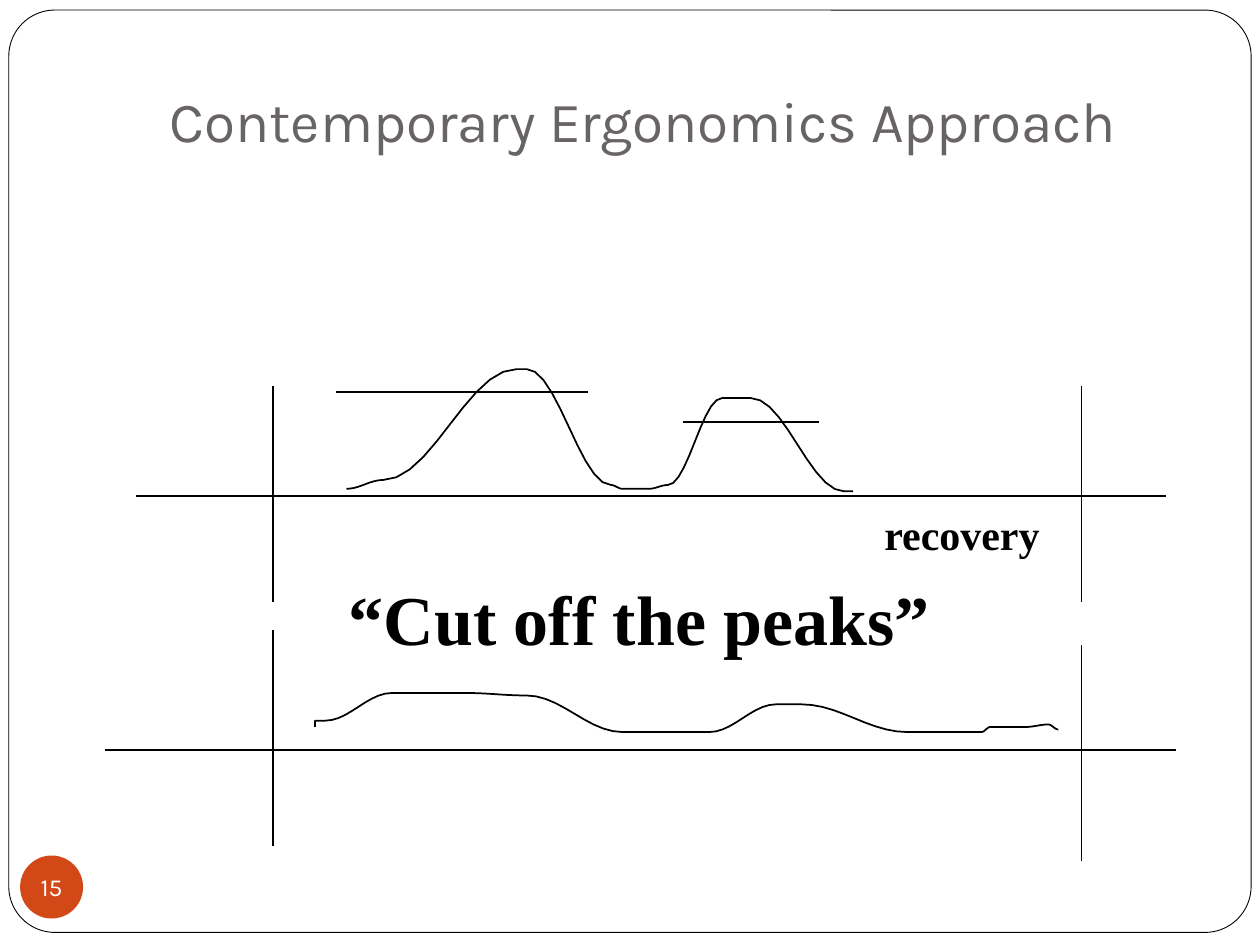
"""Build a slide on cutting off the peaks of physical workload."""
from collections.abc import Sequence
from dataclasses import dataclass
from itertools import pairwise
from math import cos, pi
from typing import Any, NamedTuple

from lxml.etree import SubElement
from pptx import Presentation
from pptx.dml.color import RGBColor
from pptx.enum.shapes import MSO_CONNECTOR as Conn, MSO_SHAPE as Shp
from pptx.enum.text import MSO_ANCHOR as Anchor, PP_ALIGN as Align
from pptx.oxml.ns import qn
from pptx.util import Emu, Inches, Pt

COLS, ROWS = 100, 75
CELL = Inches(10) // COLS
STEPS = 10
COLORS = {"paper": "FFFFFF", "ink": "000000", "title": "696464", "badge": "D34817"}
SHIFT_START, SHIFT_END = 21.67, 85.83
UPRIGHT = 17.15
Point = tuple[float, float]
Box = tuple[float, float, float, float]


class Stage(NamedTuple):
    """A phase of the workload and the column and row where it ends."""
    phase: str
    col: float
    row: float


class Span(NamedTuple):
    """A horizontal line on one row."""
    start: float
    end: float
    row: float


@dataclass(frozen=True)
class Workload:
    """A work shift with its time axis, limits and load curve."""
    axis: Span
    start_top: float
    end_top: float
    stages: Sequence[Stage]
    limits: Sequence[Span] = ()


@dataclass(frozen=True)
class Label:
    """A text with its box and formats."""
    text: str
    box: Box
    font: str
    size: float
    color: str
    bold: bool = False
    frame: tuple[tuple[str, Any], ...] = (("word_wrap", True),)


PEAKED = Workload(
    axis=Span(10.83, 92.5, 39.38), start_top=30.6, end_top=30.6,
    limits=(Span(26.67, 46.67, 31.13), Span(54.17, 65, 33.5)),
    stages=(
        Stage("rest", 27.5, 38.8),
        Stage("warm-up", 30.4, 38.1),
        Stage("high peak", 41, 29.3),
        Stage("high peak held", 41.8, 29.3),
        Stage("relief", 48.5, 38.5),
        Stage("pause", 49.4, 38.8),
        Stage("pause held", 51.5, 38.8),
        Stage("restart", 53, 38.5),
        Stage("low peak", 57.3, 31.6),
        Stage("low peak held", 59.6, 31.6),
        Stage("recovery", 67, 39),
        Stage("recovery held", 67.7, 39),
    ))
LEVELLED = Workload(
    axis=Span(8.33, 93.33, 59.5), start_top=50, end_top=51.2,
    stages=(
        Stage("rest", 25, 57.7),
        Stage("start", 25, 57.2),
        Stage("warm-up", 25.8, 57.2),
        Stage("long load", 31.1, 55),
        Stage("long load held", 37, 55),
        Stage("long load eased", 41.8, 55.2),
        Stage("pause", 49.4, 58.1),
        Stage("pause held", 56.3, 58.1),
        Stage("short load", 61.6, 55.9),
        Stage("short load held", 63.6, 55.9),
        Stage("recovery", 72, 58.1),
        Stage("recovery held", 77.9, 58.1),
        Stage("light work", 78.6, 57.7),
        Stage("light work held", 81.4, 57.7),
        Stage("last effort", 83.2, 57.5),
        Stage("finish", 84, 57.9),
    ))

LABELS = (
    Label("Contemporary Ergonomics Approach", (12.5, 6.7, 78.3, 6.5), "Karla", 32.4, "title",
          frame=(("word_wrap", True), ("vertical_anchor", Anchor.BOTTOM), ("margin_bottom", CELL))),
    Label("“Cut off the peaks”", (26.7, 45.2, 54.3, 7.7), "Times New Roman", 40, "ink", True),
    Label("recovery", (69.2, 39.9, 18.4, 5), "Times New Roman", 24, "ink", True),
)
MARGINS = tuple((f"margin_{side}", 0) for side in ("left", "right", "top", "bottom"))
BADGE = Label("15", (1.6, 67.9, 5, 5), "Karla", 14, "paper", frame=(
    ("word_wrap", False), ("vertical_anchor", Anchor.MIDDLE), *MARGINS))


def grid(*cells: float) -> list[Emu]:
    """Turn grid cells into lengths."""
    return [Emu(round(c * CELL)) for c in cells]


def rgb(name: str) -> RGBColor:
    """Look up a named colour."""
    return RGBColor.from_string(COLORS[name])


def apply(target: Any, formats: dict[str, Any]) -> None:
    """Set every format value on the target."""
    for name, value in formats.items():
        setattr(target, name, value)


def ink(sp: Any, width: float = 1) -> None:
    """Give a shape or connector a black line."""
    sp.line.color.rgb = rgb("ink")
    sp.line.width = Pt(width)


def ease(a: Stage, b: Stage) -> list[Point]:
    """Run from one stage to the next along half a cosine wave."""
    steps = 1 if a.row == b.row or a.col == b.col else STEPS
    shares = [i / steps for i in range(1, steps + 1)]
    return [(a.col + (b.col - a.col) * t, a.row + (b.row - a.row) * (1 - cos(pi * t)) / 2)
            for t in shares]


def write(sp: Any, label: Label, align: Align = Align.LEFT) -> None:
    """Write a label into a shape."""
    tf = sp.text_frame
    apply(tf, dict(label.frame))
    p = tf.paragraphs[0]
    p.alignment = align
    r = p.add_run()
    r.text = label.text
    apply(r.font, {"name": label.font, "size": Pt(label.size), "bold": label.bold})
    r.font.color.rgb = rgb(label.color)


def add_panel(s: Any, kind: Shp, box: Box, fill: str) -> Any:
    """Add a filled shape without line or shadow."""
    sp = s.shapes.add_shape(kind, *grid(*box))
    sp.shadow.inherit = False
    sp.fill.solid()
    sp.fill.fore_color.rgb = rgb(fill)
    sp.line.fill.background()
    return sp


def add_rule(s: Any, start: Point, end: Point) -> None:
    """Add a straight line."""
    sp = s.shapes.add_connector(Conn.STRAIGHT, *grid(*start, *end))
    ink(sp)
    SubElement(sp._element.spPr, qn("a:effectLst"))


def add_curve(s: Any, stages: Sequence[Stage]) -> None:
    """Add an open curve through all stages."""
    points = [grid(*point) for a, b in pairwise(stages) for point in ease(a, b)]
    fb = s.shapes.build_freeform(*grid(stages[0].col, stages[0].row))
    fb.add_line_segments(points, close=False)
    sp = fb.convert_to_shape()
    sp.shadow.inherit = False
    sp.fill.background()
    ink(sp)


def add_workload(s: Any, load: Workload) -> None:
    """Add the shift limits, axis, load limits and curve of a workload."""
    for col, top in ((SHIFT_START, load.start_top), (SHIFT_END, load.end_top)):
        add_rule(s, (col, top), (col, top + UPRIGHT))
    for span in (load.axis, *load.limits):
        add_rule(s, (span.start, span.row), (span.end, span.row))
    add_curve(s, load.stages)


def main() -> None:
    """Draw and save the slide."""
    prs = Presentation()
    apply(prs, {"slide_width": CELL * COLS, "slide_height": CELL * ROWS})
    s = prs.slides.add_slide(prs.slide_layouts[6])
    frame = add_panel(s, Shp.ROUNDED_RECTANGLE, (0.7, 0.8, 98.6, 73.2), "paper")
    frame.adjustments[0] = 0.05
    ink(frame, 0.5)
    for load in (PEAKED, LEVELLED):
        add_workload(s, load)
    for label in LABELS:
        write(s.shapes.add_textbox(*grid(*label.box)), label)
    write(add_panel(s, Shp.OVAL, BADGE.box, "badge"), BADGE, Align.CENTER)
    prs.save("out.pptx")


if __name__ == "__main__":
    main()
